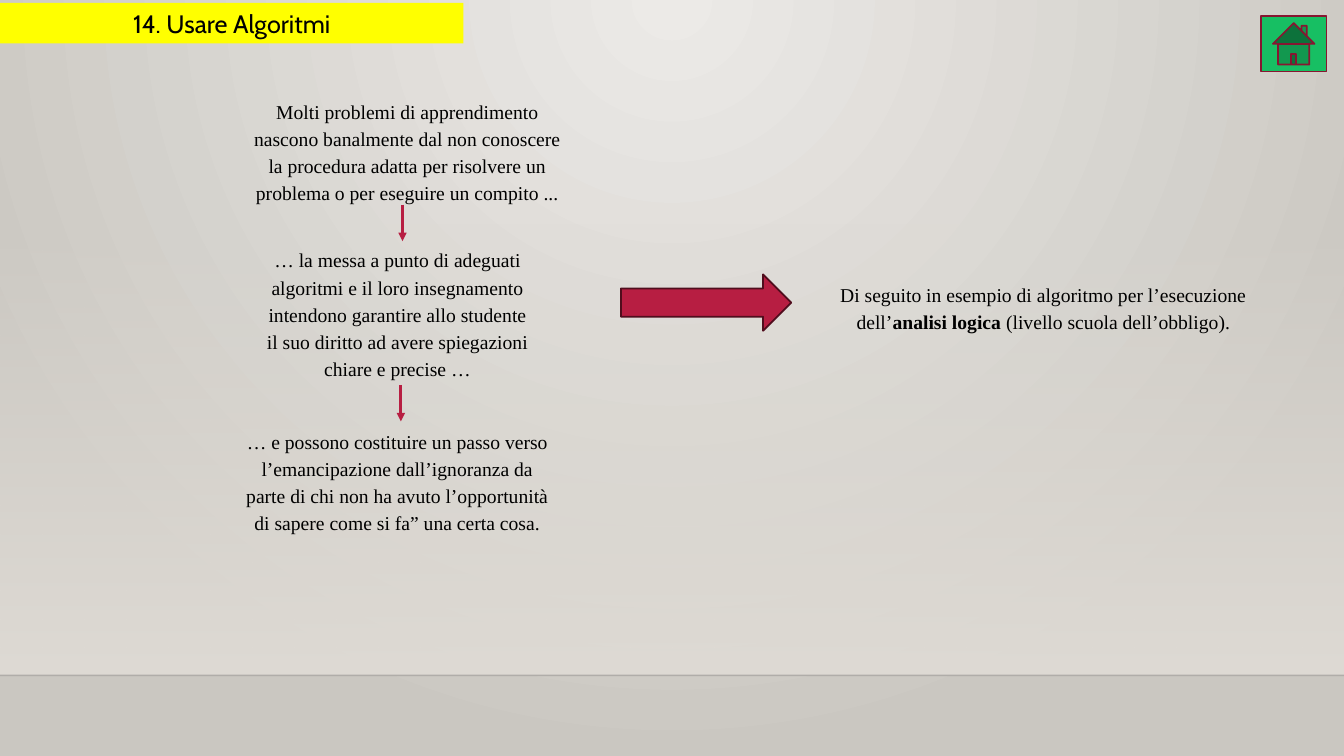
from lxml import etree
from pptx import Presentation
from pptx import util as u
from pptx.dml import color
from pptx.enum import shapes, text
from pptx.oxml import ns

Pt = u.Pt
BLACK = color.RGBColor(0x00, 0x00, 0x00)
RULE = color.RGBColor(0x00, 0x00, 0x01)
YELLOW = color.RGBColor(0xFF, 0xFF, 0x00)
GREEN = color.RGBColor(0x17, 0xBF, 0x63)
CRIMSON = color.RGBColor(0xB7, 0x1E, 0x42)
WINE = color.RGBColor(0x87, 0x16, 0x31)
DARK_WINE = color.RGBColor(0x50, 0x0D, 0x1D)
PALE = color.RGBColor(0xEC, 0xEA, 0xE7)
SAND = color.RGBColor(0xDF, 0xDB, 0xD5)
STONE = color.RGBColor(0xCA, 0xC7, 0xC1)


def add_line(x1, y1, x2, y2, colour, width):
    line = page.shapes.add_connector(
        shapes.MSO_CONNECTOR.STRAIGHT, Pt(x1), Pt(y1), Pt(x2), Pt(y2))
    line.line.color.rgb = colour
    line.line.width = Pt(width)
    etree.SubElement(line._element.spPr, ns.qn("a:effectLst"))
    return line


def set_alpha(colour_parent, percent):
    rgb = colour_parent.find(".//" + ns.qn("a:srgbClr"))
    etree.SubElement(rgb, ns.qn("a:alpha"), val=str(percent * 1000))


deck = Presentation()
deck.slide_width, deck.slide_height = Pt(960), Pt(540)
page = deck.slides.add_slide(deck.slide_layouts[5])

# Background: radial glow from the top, pale band and floor line
backdrop = page.background.fill
backdrop.gradient()
for stop, colour in zip(backdrop.gradient_stops, (PALE, STONE)):
    stop.color.rgb = colour
gradient = page._element.find(".//" + ns.qn("p:bgPr") + "/" + ns.qn("a:gradFill"))
gradient.remove(gradient.find(ns.qn("a:lin")))
circle = etree.SubElement(gradient, ns.qn("a:path"), path="circle")
etree.SubElement(circle, ns.qn("a:fillToRect"), l="43000", t="0", r="43000", b="100000")

band = page.shapes.add_shape(
    shapes.MSO_SHAPE.RECTANGLE, Pt(0), Pt(159), Pt(960), Pt(323.4))
band.shadow.inherit = False
band.line.fill.background()
band.fill.gradient()
band.fill.gradient_angle = 270
for stop in band.fill.gradient_stops:
    stop.color.rgb = SAND
set_alpha(band._element.spPr.find(ns.qn("a:gradFill")), 0)

floor = add_line(0, 482.4, 960, 482.4, RULE, 1)
set_alpha(floor._element.spPr.find(ns.qn("a:ln")), 20)

# Title
title = page.shapes.title
title.left, title.top, title.width, title.height = Pt(0), Pt(2), Pt(331), Pt(29)
title.fill.solid()
title.fill.fore_color.rgb = YELLOW
frame = title.text_frame
frame.text = "14. Usare Algoritmi"
frame.vertical_anchor = text.MSO_ANCHOR.MIDDLE
frame.auto_size = text.MSO_AUTO_SIZE.NONE
heading = frame.paragraphs[0]
heading.alignment = text.PP_ALIGN.CENTER
heading.font.name, heading.font.size = "Cabin", Pt(18)
heading.font.color.rgb = BLACK

# Home button and wide arrow
for kind, left, top, width, height, fill, outline in (
    (shapes.MSO_SHAPE.ACTION_BUTTON_HOME, 900.7, 11.5, 46.8, 39.6, GREEN, WINE),
    (shapes.MSO_SHAPE.RIGHT_ARROW, 443.5, 196, 121.7, 40.3, CRIMSON, DARK_WINE),
):
    shape = page.shapes.add_shape(kind, Pt(left), Pt(top), Pt(width), Pt(height))
    shape.shadow.inherit = False
    shape.fill.solid()
    shape.fill.fore_color.rgb = fill
    shape.line.color.rgb = outline
    shape.line.width = Pt(1.25)

# Passages: left, top, width, height, left and right margin, (words, bold) spans
passages = (
    (168, 65, 303, 83.5, 11, 68, [
        ("Molti problemi di apprendimento nascono banalmente dal non conoscere "
         "la procedura adatta per risolvere un problema o per eseguire un "
         "compito ...", False)]),
    (181.5, 171.4, 262, 103, 8, 65, [
        ("… la messa a punto di adeguati algoritmi e il loro insegnamento "
         "intendono garantire allo studente il suo diritto ad avere "
         "spiegazioni chiare e precise …", False)]),
    (168, 301, 288.7, 83.5, 7, 64, [
        ("… e possono costituire un passo verso l’emancipazione dall’ignoranza "
         "da parte di chi non ha avuto l’opportunità di sapere come si fa” una "
         "certa cosa.", False)]),
    (589.7, 196, 370.3, 44.6, 7, 66, [
        ("Di seguito in esempio di algoritmo per l’esecuzione dell’", False),
        ("analisi logica", True),
        (" (livello scuola dell’obbligo).", False)]),
)
for left, top, width, height, margin_left, margin_right, spans in passages:
    box = page.shapes.add_textbox(Pt(left), Pt(top), Pt(width), Pt(height))
    frame = box.text_frame
    frame.word_wrap = True
    frame.margin_left, frame.margin_right = Pt(margin_left), Pt(margin_right)
    para = frame.paragraphs[0]
    para.alignment = text.PP_ALIGN.CENTER
    para.line_spacing = 1.15
    para.space_after = Pt(10)
    para.font.name, para.font.size = "Times New Roman", Pt(14)
    para.font.color.rgb = BLACK
    for words, bold in spans:
        span = para.add_run()
        span.text = words
        if bold:
            span.font.bold = True

# Small arrows between the passages
for x, y in ((287.5, 146.2), (286.3, 275)):
    arrow = add_line(x, y, x, y + 26, CRIMSON, 2)
    etree.SubElement(arrow.line._get_or_add_ln(), ns.qn("a:tailEnd"), type="triangle")

deck.save("out.pptx")
